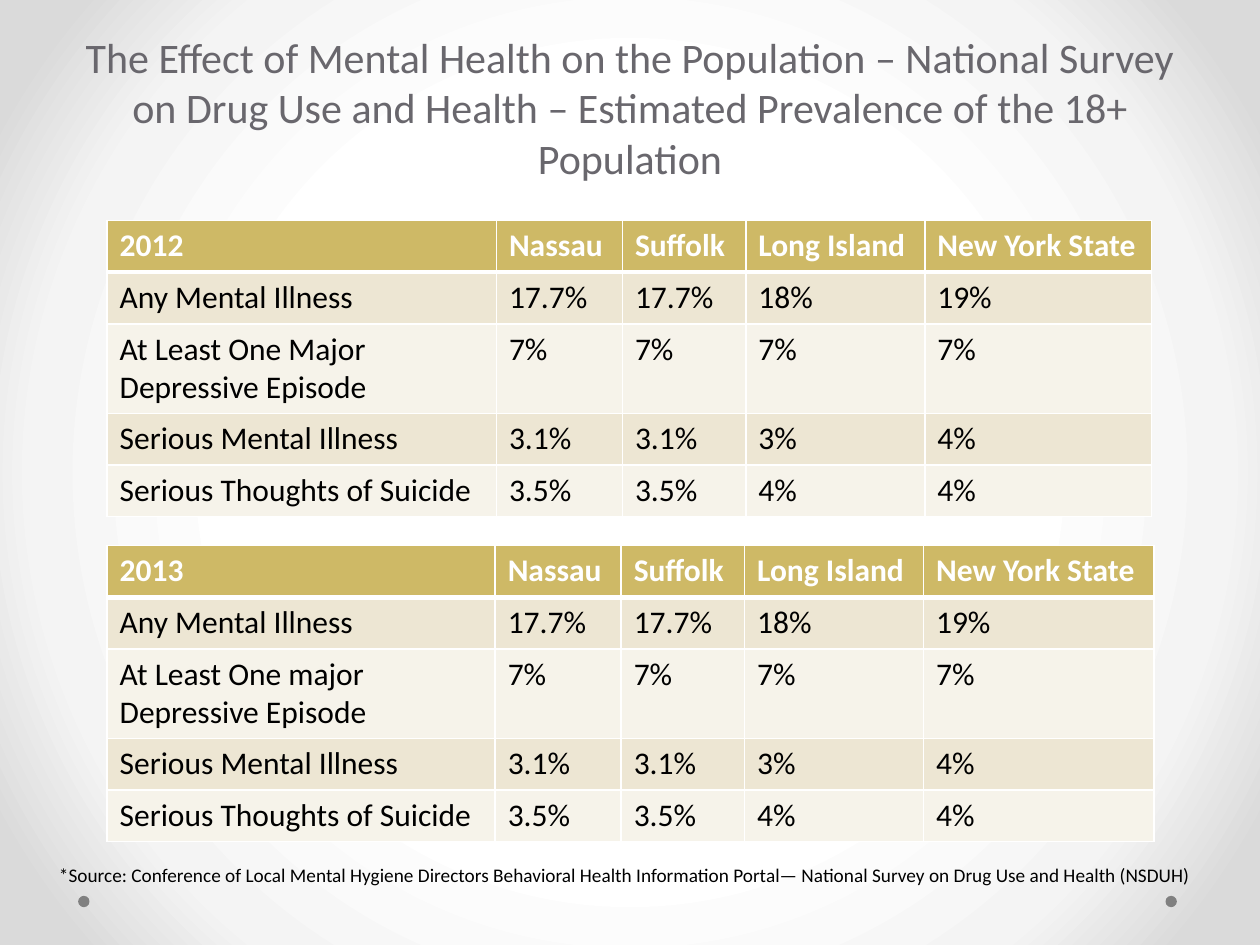
from lxml import etree
from pptx import Presentation
from pptx import util as u
from pptx.dml.color import RGBColor
from pptx.enum import shapes, text
from pptx.oxml.ns import qn

YEARS = {
    "2012": dict(top=1.75, widths=[3.09, 1, 0.98, 1.42, 1.8], episode="At Least One Major Depressive Episode"),
    "2013": dict(top=4.33, widths=[3.08, 1, 0.98, 1.42, 1.83], episode="At Least One major Depressive Episode"),
}
REGIONS = ["Nassau", "Suffolk", "Long Island", "New York State"]


def rgb(value):
    return RGBColor.from_string(value)


def survey_rows(year, episode):
    return [
        [year, *REGIONS],
        ["Any Mental Illness", "17.7%", "17.7%", "18%", "19%"],
        [episode, *["7%"] * 4],
        ["Serious Mental Illness", "3.1%", "3.1%", "3%", "4%"],
        ["Serious Thoughts of Suicide", "3.5%", "3.5%", "4%", "4%"],
    ]


class SlideBuilder:
    font = "Calibri"
    header, bands = "CEB966", ["F6F3EA", "EDE6D3"]
    white, black, title_grey, dot_grey = "FFFFFF", "000000", "69676D", "808080"

    def __init__(self, prs):
        self.s = prs.slides.add_slide(prs.slide_layouts[5])

    def background(self, stops):
        self.s.background.fill.gradient()
        grad = self.s._element.find(".//" + qn("a:gradFill"))
        for child in list(grad):
            grad.remove(child)
        gs_list = etree.SubElement(grad, qn("a:gsLst"))
        for pos, color in stops:
            gs = etree.SubElement(gs_list, qn("a:gs"), pos=str(pos * 1000))
            etree.SubElement(gs, qn("a:srgbClr"), val=color)
        circle = etree.SubElement(grad, qn("a:path"), {"path": "circle"})
        etree.SubElement(circle, qn("a:fillToRect"), dict.fromkeys("ltrb", "50000"))

    def add_text(self, tf, words, size, color, bold=False, align=text.PP_ALIGN.LEFT):
        p = tf.paragraphs[0]
        p.alignment = align
        r = p.add_run()
        r.text = words
        formats = dict(name=self.font, size=u.Pt(size), bold=bold)
        for name, value in formats.items():
            setattr(r.font, name, value)
        r.font.color.rgb = rgb(color)

    def title(self, words, left, top, width, height):
        sp = self.s.shapes.title
        box = dict(left=left, top=top, width=width, height=height)
        for name, value in box.items():
            setattr(sp, name, u.Inches(value))
        tf = sp.text_frame
        formats = dict(word_wrap=True, auto_size=text.MSO_AUTO_SIZE.NONE,
                       vertical_anchor=text.MSO_ANCHOR.BOTTOM)
        for name, value in formats.items():
            setattr(tf, name, value)
        self.add_text(tf, words, 24, self.title_grey, align=text.PP_ALIGN.CENTER)

    def dot(self, left, top, size):
        sp = self.s.shapes.add_shape(shapes.MSO_SHAPE.OVAL, *map(u.Inches, (left, top, size, size)))
        sp.shadow.inherit = False
        sp.fill.solid()
        sp.fill.fore_color.rgb = rgb(self.dot_grey)
        sp.line.fill.background()

    def borders(self, cell, widths):
        tc_pr = cell._tc.get_or_add_tcPr()
        for i, (side, width) in enumerate(widths.items()):
            ln = etree.Element(qn("a:ln" + side), w=str(u.Pt(width)))
            fill = etree.SubElement(ln, qn("a:solidFill"))
            etree.SubElement(fill, qn("a:srgbClr"), val=self.white)
            tc_pr.insert(i, ln)

    def table(self, rows, left, top, widths, row_height):
        frame = self.s.shapes.add_table(
            len(rows), len(widths), u.Inches(left), u.Inches(top),
            u.Inches(sum(widths)), u.Inches(row_height * len(rows)))
        table = frame.table
        for column, width in zip(table.columns, widths):
            column.width = u.Inches(width)
        for i, row in enumerate(rows):
            table.rows[i].height = u.Inches(row_height)
            head = i == 0
            for j, words in enumerate(row):
                cell = table.cell(i, j)
                cell.fill.solid()
                cell.fill.fore_color.rgb = rgb(self.header if head else self.bands[i % 2])
                self.borders(cell, dict(L=1, R=1, T=3 if i == 1 else 1, B=3 if head else 1))
                self.add_text(cell.text_frame, words, 18, self.white if head else self.black, bold=head)

    def note(self, words, left, top, width, height):
        sp = self.s.shapes.add_textbox(*map(u.Inches, (left, top, width, height)))
        tf = sp.text_frame
        tf.word_wrap = False
        tf.auto_size = text.MSO_AUTO_SIZE.SHAPE_TO_FIT_TEXT
        self.add_text(tf, words, 11, self.black)


def main():
    prs = Presentation()
    prs.slide_width, prs.slide_height = u.Inches(10), u.Inches(7.5)
    s = SlideBuilder(prs)

    # Background and corner dots
    s.background([(50, "FFFFFF"), (76, "F4F4F4"), (92, "DADADA")])
    for left in (9.25, 0.62):
        s.dot(left, 7.11, 0.09)

    # Title
    s.title("The Effect of Mental Health on the Population – National Survey on Drug Use "
            "and Health – Estimated Prevalence of the 18+ Population", 0.5, 0.25, 9, 1.25)

    # One table per survey year
    for year, info in YEARS.items():
        s.table(survey_rows(year, info["episode"]), 0.85, info["top"], info["widths"], 0.41)

    # Source note
    s.note("*Source: Conference of Local Mental Hygiene Directors Behavioral Health Information "
           "Portal— National Survey on Drug Use and Health (NSDUH)", 0.37, 6.8, 9.27, 0.29)

    prs.save("out.pptx")


if __name__ == "__main__":
    main()
